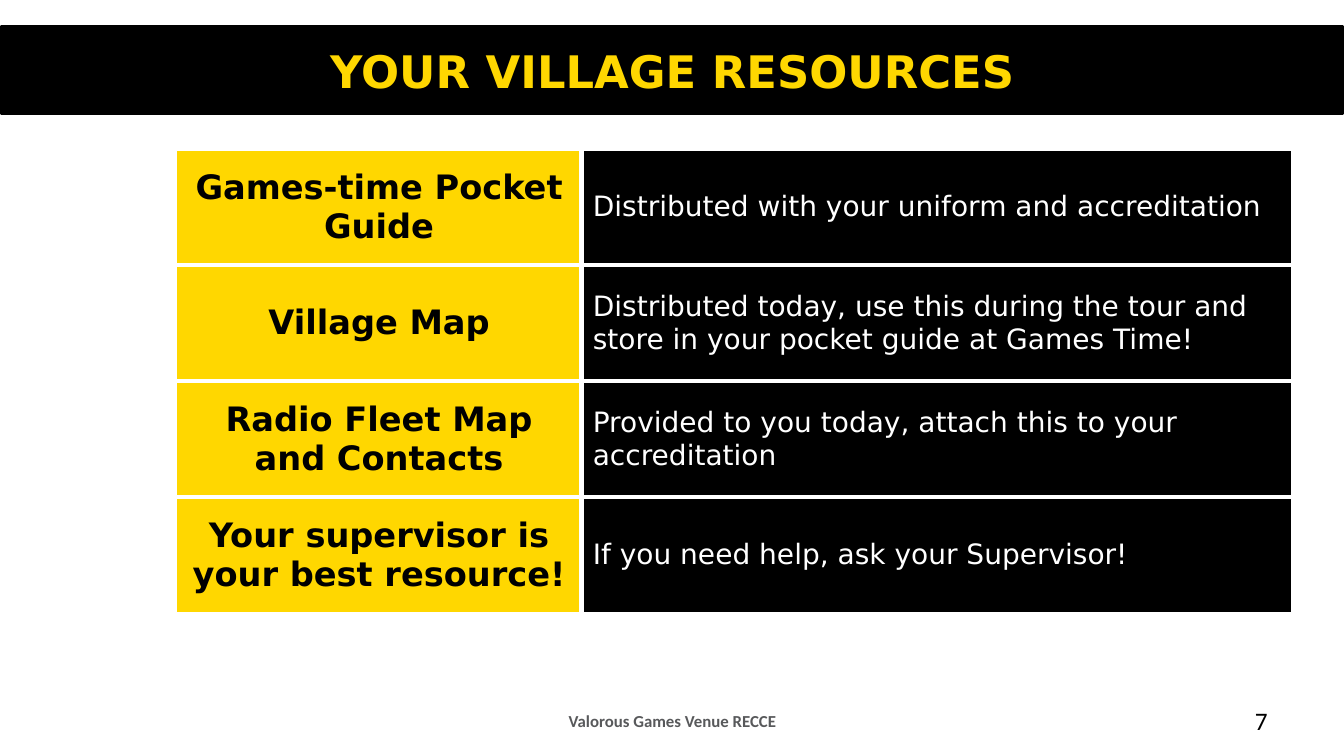
from dataclasses import dataclass

from lxml import etree
from pptx import Presentation
from pptx.dml.color import RGBColor
from pptx.enum import shapes, text
from pptx.oxml import ns
from pptx.util import Inches, Pt


@dataclass(frozen=True)
class Theme:
    black: str = "000000"
    gold: str = "FFD700"
    white: str = "FFFFFF"
    gray: str = "58595B"
    main_font: str = "DejaVu Sans"
    footer_font: str = "Calibri"
    title_size: int = 32
    label_size: int = 24
    detail_size: int = 20
    number_size: int = 18
    footer_size: int = 12


theme = Theme()


def write(frame, content, font_name, size, color, bold, align):
    frame.word_wrap = True
    frame.vertical_anchor = text.MSO_ANCHOR.MIDDLE
    paragraph = frame.paragraphs[0]
    paragraph.text = content
    paragraph.alignment = align
    paragraph.font.name = font_name
    paragraph.font.size = Pt(size)
    paragraph.font.bold = bold
    paragraph.font.color.rgb = RGBColor.from_string(color)


def add_border(cell, side, width):
    line = etree.SubElement(cell._tc.get_or_add_tcPr(), ns.qn(f"a:ln{side}"), w=str(Pt(width)))
    fill = etree.SubElement(line, ns.qn("a:solidFill"))
    etree.SubElement(fill, ns.qn("a:srgbClr"), val=theme.white)


presentation = Presentation()
presentation.slide_width = Inches(13.33)
presentation.slide_height = Inches(7.5)
slide = presentation.slides.add_slide(presentation.slide_layouts[5])
left, center, right = text.PP_ALIGN.LEFT, text.PP_ALIGN.CENTER, text.PP_ALIGN.RIGHT

# Title band, behind the title
band = slide.shapes.add_shape(
    shapes.MSO_SHAPE.RECTANGLE, Inches(0.01), Inches(0.26), Inches(13.31), Inches(0.87))
band.shadow.inherit = False
band.fill.solid()
band.fill.fore_color.rgb = RGBColor.from_string(theme.black)
band.line.color.rgb = RGBColor.from_string(theme.black)
band.line.width = Pt(2)
slide.shapes._spTree.insert(2, band._element)

# Title
title = slide.shapes.title
title.left, title.top = Inches(0.67), Inches(0.27)
title.width, title.height = Inches(12), Inches(0.86)
write(title.text_frame, "YOUR VILLAGE RESOURCES", theme.main_font,
      theme.title_size, theme.gold, True, center)

# Resource table
resources = [
    ("Games-time Pocket Guide", "Distributed with your uniform and accreditation"),
    ("Village Map", "Distributed today, use this during the tour and store in your "
                    "pocket guide at Games Time!"),
    ("Radio Fleet Map and Contacts", "Provided to you today, attach this to your accreditation"),
    ("Your supervisor is your best resource!", "If you need help, ask your Supervisor!"),
]
column_styles = [
    (4.02, theme.gold, theme.label_size, theme.black, True, center),
    (7.04, theme.black, theme.detail_size, theme.white, False, left),
]
table = slide.shapes.add_table(
    len(resources), 2, Inches(1.75), Inches(1.48), Inches(11.06), Inches(4.6)).table
table.first_row = False
table.horz_banding = False
for row in table.rows:
    row.height = Inches(1.15)

for column_index, (width, fill, size, color, bold, align) in enumerate(column_styles):
    table.columns[column_index].width = Inches(width)
    for row_index, resource in enumerate(resources):
        cell = table.cell(row_index, column_index)
        cell.margin_left = cell.margin_right = Inches(0.11)
        cell.margin_top = cell.margin_bottom = Inches(0.04)
        cell.vertical_anchor = text.MSO_ANCHOR.MIDDLE
        add_border(cell, "R" if column_index == 0 else "L", 4.5)
        add_border(cell, "T", 3)
        if row_index < len(resources) - 1:
            add_border(cell, "B", 3)
        cell.fill.solid()
        cell.fill.fore_color.rgb = RGBColor.from_string(fill)
        paragraph = cell.text_frame.paragraphs[0]
        paragraph.text = resource[column_index]
        paragraph.alignment = align
        paragraph.font.name = theme.main_font
        paragraph.font.size = Pt(size)
        paragraph.font.bold = bold
        paragraph.font.color.rgb = RGBColor.from_string(color)

# Footer and slide number
footers = [
    (4.56, 4.22, "Valorous Games Venue RECCE", theme.footer_size, theme.gray, True, center),
    (9.56, 3.11, "7", theme.number_size, theme.black, False, right),
]
for x, width, content, size, color, bold, align in footers:
    footer = slide.shapes.add_textbox(Inches(x), Inches(6.95), Inches(width), Inches(0.4))
    write(footer.text_frame, content, theme.footer_font, size, color, bold, align)

presentation.save("out.pptx")
